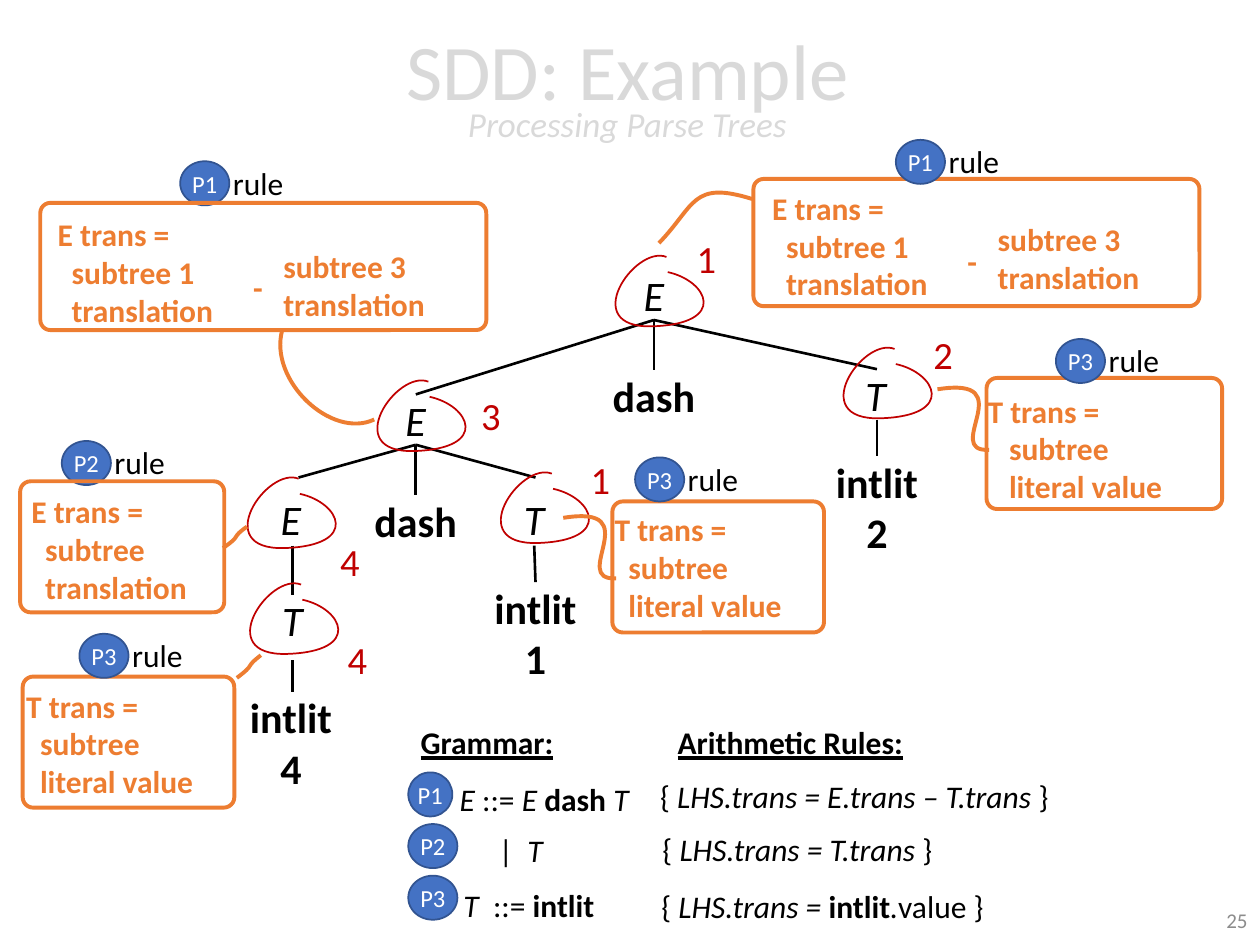
from dataclasses import dataclass

from lxml.etree import SubElement
from pptx import Presentation
from pptx.dml.color import RGBColor
from pptx.enum.shapes import MSO_CONNECTOR, MSO_SHAPE
from pptx.enum.text import MSO_ANCHOR, MSO_AUTO_SIZE, PP_ALIGN
from pptx.oxml.ns import qn
from pptx.util import Inches, Pt

BLACK = RGBColor(0x00, 0x00, 0x00)
WHITE = RGBColor(0xFF, 0xFF, 0xFF)
PALE_GRAY = RGBColor(0xD9, 0xD9, 0xD9)
GRAY = RGBColor(0x8C, 0x8C, 0x8C)
RED = RGBColor(0xC0, 0x00, 0x00)
ORANGE = RGBColor(0xED, 0x7D, 0x31)
BLUE = RGBColor(0x44, 0x72, 0xC4)
DARK_BLUE = RGBColor(0x32, 0x54, 0x91)

Point = tuple[float, float]
Span = tuple[str, str]  # text, and any of the letters b, i, u
LOOP = [(0.4, 0.01), (0.15, -0.09), (-0.31, 0.58), (0.29, 0.56),
        (0.89, 0.54), (0.73, 0.2), (0.41, 0.13)]
CURVE_STEPS = 24


@dataclass
class Node:
    symbol: str
    symbol_at: Point
    loop_at: Point
    number: str
    number_at: Point
    number_width: float = 0.41


@dataclass
class RuleNote:
    production: str
    badge_at: Point
    box: tuple[float, float, float, float]
    text_at: Point
    lines: list[str]
    curve: list[Point]
    indent: float = 0.11
    badge_behind: bool = False


LITERAL = ["T trans =", "subtree", "literal value"]
UNARY = ["E trans =", "subtree", "translation"]
BINARY = ["E trans =", "subtree 1", "translation"]

NODES = [
    Node("E", (5.01, 2.14), (4.89, 2.03), "1", (5.43, 1.82), 0.33),
    Node("T", (6.77, 2.93), (6.7, 2.76), "2", (7.31, 2.58)),
    Node("E", (3.12, 3.13), (3, 3.02), "3", (3.72, 3.06), 0.33),
    Node("E", (2.13, 3.92), (1.97, 3.79), "4", (2.6, 4.22)),
    Node("T", (4.06, 3.92), (3.98, 3.75), "1", (4.59, 3.57), 0.33),
    Node("T", (2.14, 4.72), (1.99, 4.63), "4", (2.66, 5)),
]
LEAVES = [
    (4.76, 2.94, ["dash"]), (2.87, 3.93, ["dash"]),
    (6.53, 3.62, ["intlit", "2"]), (3.82, 4.62, ["intlit", "1"]),
    (1.88, 5.49, ["intlit", "4"]),
]
BRANCHES = [
    ((5.19, 2.54), (3.3, 3.13)), ((5.19, 2.54), (5.19, 2.94)),
    ((5.19, 2.54), (6.96, 2.93)), ((3.3, 3.53), (2.37, 3.79)),
    ((3.3, 3.53), (3.3, 3.93)), ((3.3, 3.53), (4.25, 3.79)),
    ((6.96, 3.33), (6.96, 3.62)), ((4.24, 4.33), (4.25, 4.62)),
    ((2.32, 4.33), (2.32, 4.72)), ((2.32, 5.24), (2.32, 5.49)),
]
NOTES = [
    RuleNote("P3", (0.63, 5.03), (0.18, 5.37, 1.68, 1.04), (0.11, 5.4), LITERAL,
             [(2.07, 5.2), (1.93, 5.31), (2.04, 5.26), (1.88, 5.38)]),
    RuleNote("P1", (7.11, 1.11), (5.98, 1.42, 3.54, 1.01), (6.03, 1.45), BINARY,
             [(5.97, 1.58), (5.49, 1.43), (5.52, 1.63), (5.23, 1.93)]),
    RuleNote("P3", (8.38, 2.69), (7.83, 3, 1.87, 1.04), (7.74, 3.06), LITERAL,
             [(7.85, 3.57), (7.47, 3.59), (8.12, 2.98), (7.44, 3.09)], indent=0.17),
    RuleNote("P3", (5.04, 3.63), (4.86, 3.98, 1.68, 1.04), (4.78, 4), LITERAL,
             [(4.89, 4.59), (4.51, 4.61), (5.15, 4), (4.47, 4.11)]),
    RuleNote("P1", (1.43, 1.28), (0.32, 1.61, 3.54, 1.01), (0.36, 1.66), BINARY,
             [(2.24, 2.62), (2.13, 3.02), (2.63, 3.49), (2.97, 3.33)], badge_behind=True),
    RuleNote("P2", (0.49, 3.5), (0.16, 3.82, 1.62, 1.04), (0.15, 3.86), UNARY,
             [(1.96, 4.18), (1.82, 4.28), (1.93, 4.24), (1.77, 4.35)], badge_behind=True),
]
GRAMMAR = [
    (3.24, 5.69, 1.37, [("Grammar:", "bu")]),
    (5.28, 5.69, 3.08, [("Arithmetic Rules:", "bu")]),
    (3.55, 6.14, 4.87, [("E ", "i"), ("::=", ""), (" E ", "i"), ("dash", "b"), (" T", "i")]),
    (3.86, 6.55, 4.56, [("|", ""), ("  T", "i")]),
    (3.58, 6.98, 4.83, [("T  ", "i"), ("::= ", ""), ("intlit", "b")]),
    (5.14, 6.12, 3.31, [("{ ", ""), ("LHS.trans = E.trans – T.trans ", "i"), ("}", "")]),
    (5.16, 6.54, 2.36, [("{ ", ""), ("LHS.trans = T.trans ", "i"), ("}", "")]),
    (5.15, 6.99, 2.79, [("{ ", ""), ("LHS.trans = ", "i"), ("intlit", "b"),
                        (".", "i"), ("value }", "")]),
]


def add_span(para, text: str, style: str, size: float, color: RGBColor) -> None:
    span = para.add_run()
    span.text = text
    font = span.font
    font.name, font.size, font.color.rgb = "Calibri", Pt(size), color
    font.bold, font.italic, font.underline = (letter in style for letter in "biu")


def add_text(page, left: float, top: float, width: float, height: float,
             paragraphs: list[list[Span]], size: float, color: RGBColor = BLACK,
             align=PP_ALIGN.LEFT, margin: float = 0.05, wrap: bool = False):
    box = page.shapes.add_textbox(Inches(left), Inches(top), Inches(width), Inches(height))
    frame = box.text_frame
    frame.word_wrap = wrap
    frame.auto_size = MSO_AUTO_SIZE.NONE if wrap else MSO_AUTO_SIZE.SHAPE_TO_FIT_TEXT
    frame.margin_top = frame.margin_bottom = Inches(margin)
    for index, spans in enumerate(paragraphs):
        para = frame.add_paragraph() if index else frame.paragraphs[0]
        para.alignment = align
        for text, style in spans:
            add_span(para, text, style, size, color)
    return box


def point_on_curve(corners: list[Point], t: float) -> Point:
    u = 1 - t
    weights = (u**3, 3 * u * u * t, 3 * u * t * t, t**3)
    return tuple(sum(weight * corner[axis] for weight, corner in zip(weights, corners))
                 for axis in (0, 1))


def add_curve(page, points: list[Point], color: RGBColor, width: float) -> None:
    """Draw joined cubic curves: a start point, then three points for each curve."""
    starts = range(0, len(points) - 1, 3)
    extent = [point_on_curve(points[first:first + 4], step / CURVE_STEPS)
              for first in starts for step in range(1, CURVE_STEPS + 1)]
    builder = page.shapes.build_freeform(Inches(points[0][0]), Inches(points[0][1]))
    builder.add_line_segments([(Inches(x), Inches(y)) for x, y in extent], close=False)
    curve = builder.convert_to_shape()
    # The straight segments fix the frame; true curves then take their place.
    outline = next(curve._element.iter(qn("a:path")))
    for segment in outline.findall(qn("a:lnTo")):
        outline.remove(segment)
    for first in starts:
        bezier = SubElement(outline, qn("a:cubicBezTo"))
        for x, y in points[first + 1:first + 4]:
            SubElement(bezier, qn("a:pt"), x=str(Inches(x) - curve.left),
                       y=str(Inches(y) - curve.top))
    curve.shadow.inherit = False
    curve.fill.background()
    curve.line.color.rgb, curve.line.width = color, Pt(width)


def add_branch(page, start: Point, end: Point) -> None:
    branch = page.shapes.add_connector(MSO_CONNECTOR.STRAIGHT, *map(Inches, start + end))
    branch.line.color.rgb, branch.line.width = BLACK, Pt(1.5)
    SubElement(branch._element.spPr, qn("a:effectLst"))


def add_badge(page, production: str, left: float, top: float, width: float = 0.39) -> None:
    badge = page.shapes.add_shape(MSO_SHAPE.OVAL, Inches(left), Inches(top),
                                  Inches(width), Inches(0.35))
    badge.shadow.inherit = False
    badge.fill.solid()
    badge.fill.fore_color.rgb = BLUE
    badge.line.color.rgb, badge.line.width = DARK_BLUE, Pt(1)
    frame = badge.text_frame
    frame.margin_left = frame.margin_right = frame.margin_top = frame.margin_bottom = 0
    frame.vertical_anchor = MSO_ANCHOR.MIDDLE
    frame.paragraphs[0].alignment = PP_ALIGN.CENTER
    add_span(frame.paragraphs[0], production, "", 14, WHITE)


def add_note_lines(page, left: float, top: float, lines: list[str], indents: list[float]) -> None:
    box = add_text(page, left, top, 1.8 if lines[-1] == "literal value" else 1.69,
                   0.1 + 0.3 * len(lines), [[(line, "b")] for line in lines], 18, ORANGE)
    for para, indent in zip(box.text_frame.paragraphs, indents):
        properties = para._p.get_or_add_pPr()
        properties.set("marL", str(Inches(indent)))
        properties.set("indent", "0")


def add_rule_label(page, note: RuleNote) -> None:
    left, top = note.badge_at
    add_badge(page, note.production, left, top)
    add_text(page, left + 0.32, top - 0.03, 0.61, 0.4, [[("rule", "")]], 18)


def add_note(page, note: RuleNote) -> None:
    if note.badge_behind:
        add_rule_label(page, note)
    left, top = note.text_at
    add_note_lines(page, left, top, note.lines, [0, note.indent, note.indent])
    if note.lines is BINARY:
        add_note_lines(page, left + 1.68, top + 0.25, ["subtree 3", "translation"],
                       [note.indent] * 2)
        add_text(page, left + 1.55, top + 0.42, 0.32, 0.4, [[("-", "b")]], 18, ORANGE)
    frame = page.shapes.add_shape(MSO_SHAPE.ROUNDED_RECTANGLE, *map(Inches, note.box))
    frame.adjustments[0] = 0.08
    frame.shadow.inherit = False
    frame.fill.background()
    frame.line.color.rgb, frame.line.width = ORANGE, Pt(2.25)
    add_curve(page, note.curve, ORANGE, 2.25)
    if not note.badge_behind:
        add_rule_label(page, note)


def add_node(page, node: Node) -> None:
    add_text(page, *node.symbol_at, 0.37, 0.4, [[(node.symbol, "i")]], 24, margin=0)
    left, top = node.loop_at
    add_curve(page, [(left + x, top + y) for x, y in LOOP], RED, 1)
    add_text(page, *node.number_at, node.number_width, 0.47, [[(node.number, "")]], 22, RED)


def add_title(page) -> None:
    box = add_text(page, 0.2, 0.03, 9.56, 1.45, [[("SDD: Example", "")]], 45, PALE_GRAY,
                   PP_ALIGN.CENTER, wrap=True)
    box.text_frame.vertical_anchor = MSO_ANCHOR.MIDDLE
    para = box.text_frame.paragraphs[0]
    para.line_spacing = 0.7
    para.add_line_break()
    add_span(para, "Processing Parse Trees", "i", 20, PALE_GRAY)


def main() -> None:
    deck = Presentation()
    deck.slide_width, deck.slide_height = Inches(10), Inches(7.5)
    page = deck.slides.add_slide(deck.slide_layouts[6])
    number = add_text(page, 7.75, 7.1, 2.25, 0.4, [[("25", "")]], 12, GRAY,
                      PP_ALIGN.RIGHT, wrap=True)
    number.text_frame.vertical_anchor = MSO_ANCHOR.MIDDLE
    add_title(page)
    for start, end in BRANCHES:
        add_branch(page, start, end)
    for left, top, words in LEAVES:
        add_text(page, left, top, 0.86, 0.4 * len(words), [[(word, "b")] for word in words],
                 24, align=PP_ALIGN.CENTER, margin=0)
    for node in NODES:
        add_node(page, node)
    for note in NOTES:
        add_note(page, note)
    for left, top, width, spans in GRAMMAR:
        add_text(page, left, top, width, 0.4, [spans], 18, wrap=True)
    for production, top, width in (("P1", 6.13, 0.35), ("P2", 6.54, 0.39), ("P3", 6.95, 0.39)):
        add_badge(page, production, 3.24, top, width)
    deck.save("out.pptx")


if __name__ == "__main__":
    main()
